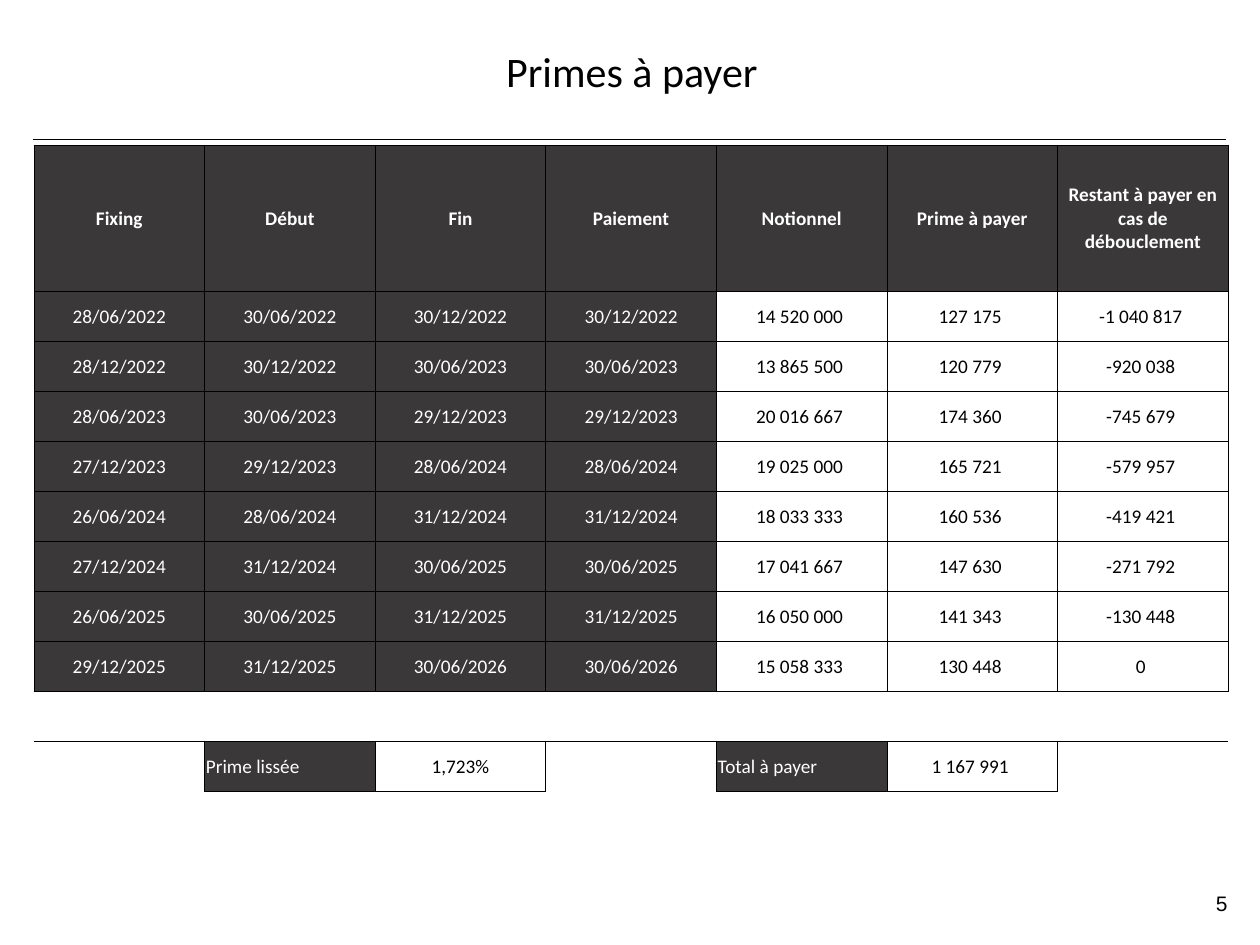
from pptx import Presentation, util as u
from pptx.dml.color import RGBColor
from pptx.enum import shapes, text
from pptx.oxml.ns import qn
from lxml import etree

# Content
TITLE = "Primes à payer"
PAGE = "5"
HEADER = ["Fixing", "Début", "Fin", "Paiement", "Notionnel", "Prime à payer",
          "Restant à payer en cas de débouclement"]
PAYMENTS = [
    ["28/06/2022", "30/06/2022", "30/12/2022", "30/12/2022", "14 520 000 ", "127 175 ", "-1 040 817 "],
    ["28/12/2022", "30/12/2022", "30/06/2023", "30/06/2023", "13 865 500 ", "120 779 ", "-920 038 "],
    ["28/06/2023", "30/06/2023", "29/12/2023", "29/12/2023", "20 016 667 ", "174 360 ", "-745 679 "],
    ["27/12/2023", "29/12/2023", "28/06/2024", "28/06/2024", "19 025 000 ", "165 721 ", "-579 957 "],
    ["26/06/2024", "28/06/2024", "31/12/2024", "31/12/2024", "18 033 333 ", "160 536 ", "-419 421 "],
    ["27/12/2024", "31/12/2024", "30/06/2025", "30/06/2025", "17 041 667 ", "147 630 ", "-271 792 "],
    ["26/06/2025", "30/06/2025", "31/12/2025", "31/12/2025", "16 050 000 ", "141 343 ", "-130 448 "],
    ["29/12/2025", "31/12/2025", "30/06/2026", "30/06/2026", "15 058 333 ", "130 448 ", "0 "],
]
SUMMARY = ["", "Prime lissée", "1,723%", "", "Total à payer", "1 167 991 ", ""]
ROWS = [HEADER, *PAYMENTS, [""] * len(HEADER), SUMMARY]
DATE_COLS = 4
SUMMARY_LABELS = (1, 4)

# Style and grid, in inches
DARK, WHITE, BLACK = "3A3838", "FFFFFF", "000000"
LEFT, TOP, WIDTH, HEIGHT = 0.27, 1.15, 9.48, 5.13
HEADER_H = 1.16
PLAIN_TABLE = "{2D5ABB26-0587-4C30-8999-92F81FD0307C}"


def rgb(color):
    return RGBColor.from_string(color)


def write(tf, words, size, font, color, align, bold=False):
    tf.word_wrap = True
    tf.vertical_anchor = text.MSO_ANCHOR.MIDDLE
    p = tf.paragraphs[0]
    p.alignment = align
    r = p.add_run()
    r.text = words
    r.font.size, r.font.name, r.font.bold = u.Pt(size), font, bold
    r.font.color.rgb = rgb(color)


def has_text(row, col):
    return 0 <= row < len(ROWS) and 0 <= col < len(HEADER) and ROWS[row][col] != ""


def add_borders(cell, row, col):
    """Draw every edge that touches a cell with text."""
    tc_pr = cell._tc.get_or_add_tcPr()
    for tag, dr, dc in (("lnL", 0, -1), ("lnR", 0, 1), ("lnT", -1, 0), ("lnB", 1, 0)):
        if has_text(row, col) or has_text(row + dr, col + dc):
            ln = etree.SubElement(tc_pr, qn(f"a:{tag}"), w=str(u.Pt(0.5)))
            fill = etree.SubElement(ln, qn("a:solidFill"))
            etree.SubElement(fill, qn("a:srgbClr"), val=BLACK)


def fill_cell(cell, row, col):
    words = ROWS[row][col]
    label = row == len(ROWS) - 1 and col in SUMMARY_LABELS
    dark = label or (words and (row == 0 or (row <= len(PAYMENTS) and col < DATE_COLS)))
    cell.margin_left = cell.margin_right = cell.margin_top = u.Inches(0.01)
    cell.margin_bottom = 0
    add_borders(cell, row, col)
    if dark:
        cell.fill.solid()
        cell.fill.fore_color.rgb = rgb(DARK)
    else:
        cell.fill.background()
    if words:
        cell.vertical_anchor = text.MSO_ANCHOR.MIDDLE
        align = text.PP_ALIGN.LEFT if label else text.PP_ALIGN.CENTER
        write(cell.text_frame, words, 11, "Calibri", WHITE if dark else BLACK,
              align, bold=row == 0)


def main():
    prs = Presentation()
    prs.slide_width, prs.slide_height = u.Inches(10), u.Inches(7.5)
    s = prs.slides.add_slide(prs.slide_layouts[5])

    # Rule under the title
    line = s.shapes.add_connector(shapes.MSO_CONNECTOR.STRAIGHT, u.Inches(0.26),
                                  u.Inches(1.11), u.Inches(9.73), u.Inches(1.11))
    line.line.color.rgb = rgb(BLACK)
    line.line.width = u.Pt(0.75)
    etree.SubElement(line._element.spPr, qn("a:effectLst"))

    # Page number
    number = s.shapes.add_textbox(u.Inches(7.51), u.Inches(6.99), u.Inches(2.33), u.Inches(0.36))
    write(number.text_frame, PAGE, 12, "Arial", BLACK, text.PP_ALIGN.RIGHT)

    # Title
    title = s.shapes.title
    title.left, title.top = u.Inches(1.72), u.Inches(0.31)
    title.width, title.height = u.Inches(6.59), u.Inches(0.5)
    write(title.text_frame, TITLE, 24, "Calibri", BLACK, text.PP_ALIGN.CENTER)

    # Payment schedule with its summary row
    frame = s.shapes.add_table(len(ROWS), len(HEADER), u.Inches(LEFT), u.Inches(TOP),
                               u.Inches(WIDTH), u.Inches(HEIGHT))
    table = frame.table
    table.first_row = table.horz_banding = False
    table._tbl.tblPr.find(qn("a:tableStyleId")).text = PLAIN_TABLE
    for col in table.columns:
        col.width = u.Inches(WIDTH / len(HEADER))
    for i, row in enumerate(table.rows):
        row.height = u.Inches((HEIGHT - HEADER_H) / (len(ROWS) - 1) if i else HEADER_H)
        for j, cell in enumerate(row.cells):
            fill_cell(cell, i, j)

    prs.save("out.pptx")


if __name__ == "__main__":
    main()
